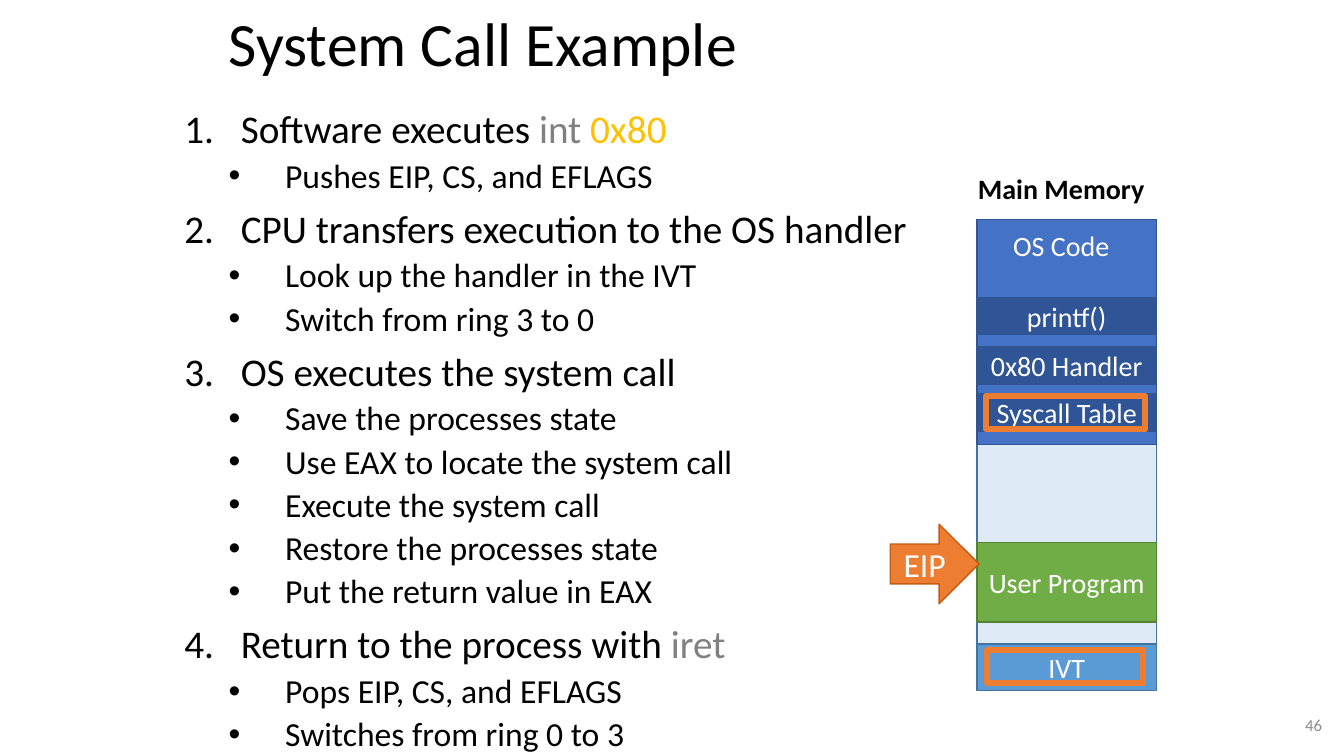
from dataclasses import dataclass

from lxml import etree
from pptx import Presentation
from pptx.dml.color import RGBColor
from pptx.enum.shapes import MSO_SHAPE
from pptx.enum.text import MSO_ANCHOR, MSO_AUTO_SIZE, PP_ALIGN
from pptx.oxml.ns import qn
from pptx.util import Inches, Pt

RECTANGLE, RIGHT_ARROW = MSO_SHAPE.RECTANGLE, MSO_SHAPE.RIGHT_ARROW
TOP, MIDDLE = MSO_ANCHOR.TOP, MSO_ANCHOR.MIDDLE
LEFT, CENTER, RIGHT = PP_ALIGN.LEFT, PP_ALIGN.CENTER, PP_ALIGN.RIGHT
FIT_SHAPE = MSO_AUTO_SIZE.SHAPE_TO_FIT_TEXT


@dataclass(frozen=True)
class Theme:
    font: str = "Calibri"
    title_size: int = 44
    step_size: int = 28
    detail_size: int = 24
    label_size: int = 20
    number_size: int = 12
    text: str = "000000"
    inverse: str = "FFFFFF"
    muted: str = "8C8C8C"
    keyword: str = "808080"
    literal: str = "FFC000"
    memory: str = "DEEBF7"
    vector_table: str = "5B9BD5"
    memory_line: str = "43739E"
    system: str = "4472C4"
    routine: str = "2F5597"
    system_line: str = "325491"
    program: str = "70AD47"
    program_line: str = "548235"
    accent: str = "ED7D31"
    accent_line: str = "C55A11"


THEME = Theme()

# Each step: its runs (text, colour) and its details.
STEPS = [
    ([("Software executes ", THEME.text), ("int ", THEME.keyword), ("0x80", THEME.literal)],
     ["Pushes EIP, CS, and EFLAGS"]),
    ([("CPU transfers execution to the OS handler", THEME.text)],
     ["Look up the handler in the IVT", "Switch from ring 3 to 0"]),
    ([("OS executes the system call", THEME.text)],
     ["Save the processes state", "Use EAX to locate the system call",
      "Execute the system call", "Restore the processes state",
      "Put the return value in EAX"]),
    ([("Return to the process with ", THEME.text), ("iret", THEME.keyword)],
     ["Pops EIP, CS, and EFLAGS", "Switches from ring 0 to 3"]),
]

MEMORY_LEFT, MEMORY_WIDTH = 9.69, 1.78
ROUTINE_HEIGHT = 0.37


def add_run(paragraph, text, *, size, color=THEME.text, bold=False):
    run = paragraph.add_run()
    run.text = text
    run.font.name = THEME.font
    run.font.size = Pt(size)
    run.font.bold = bold
    run.font.color.rgb = RGBColor.from_string(color)


def set_list_marker(paragraph, margin, tag, **attributes):
    """Give the paragraph a hanging indent and a bullet or number."""
    properties = paragraph._p.get_or_add_pPr()
    properties.set("marL", str(Inches(margin)))
    properties.set("indent", str(Inches(-0.56)))
    font = etree.SubElement(properties, qn("a:buFont"))
    font.set("typeface", "Arial" if tag == "a:buChar" else "+mj-lt")
    marker = etree.SubElement(properties, qn(tag))
    for name, value in attributes.items():
        marker.set(name, value)


class SlideBuilder:
    def __init__(self, slide, theme):
        self.slide = slide
        self.theme = theme

    def text_frame(self, box, anchor=MIDDLE, wrap=True):
        shape = self.slide.shapes.add_textbox(*map(Inches, box))
        frame = shape.text_frame
        frame.word_wrap = wrap
        frame.vertical_anchor = anchor
        return frame

    def text(self, text, box, *, align=LEFT, line_spacing=1.0, **text_format):
        frame = self.text_frame(box)
        paragraph = frame.paragraphs[0]
        paragraph.alignment = align
        paragraph.line_spacing = line_spacing
        add_run(paragraph, text, **text_format)

    def label(self, text, box, **text_format):
        """Add a one-line caption whose box fits its text."""
        frame = self.text_frame(box, anchor=TOP, wrap=False)
        frame.auto_size = FIT_SHAPE
        add_run(frame.paragraphs[0], text, size=self.theme.label_size, **text_format)

    def shape(self, box, *, fill=None, line, line_width=1, text="", size=THEME.label_size,
              preset=RECTANGLE):
        shape = self.slide.shapes.add_shape(preset, *map(Inches, box))
        shape.shadow.inherit = False
        if fill:
            shape.fill.solid()
            shape.fill.fore_color.rgb = RGBColor.from_string(fill)
        else:
            shape.fill.background()
        shape.line.color.rgb = RGBColor.from_string(line)
        shape.line.width = Pt(line_width)
        if text:
            frame = shape.text_frame
            frame.word_wrap = True
            frame.vertical_anchor = MIDDLE
            paragraph = frame.paragraphs[0]
            paragraph.alignment = CENTER
            add_run(paragraph, text, size=size, color=self.theme.inverse)

    def memory_block(self, top, height, fill, line, text=""):
        self.shape((MEMORY_LEFT, top, MEMORY_WIDTH, height), fill=fill, line=line, text=text)

    def highlight(self, box):
        self.shape(box, line=self.theme.accent, line_width=4.5)

    def steps(self, steps, box):
        """Add numbered steps, each followed by bulleted details."""
        frame = self.text_frame(box)
        paragraphs = []

        def next_paragraph(level, space_before):
            paragraph = frame.add_paragraph() if paragraphs else frame.paragraphs[0]
            paragraphs.append(paragraph)
            paragraph.level = level
            paragraph.line_spacing = 0.9
            paragraph.space_before = Pt(space_before)
            return paragraph

        for runs, details in steps:
            paragraph = next_paragraph(0, 10)
            set_list_marker(paragraph, 0.56, "a:buAutoNum", type="arabicPeriod")
            for text, color in runs:
                add_run(paragraph, text, size=self.theme.step_size, color=color)
            for detail in details:
                paragraph = next_paragraph(1, 5)
                set_list_marker(paragraph, 1, "a:buChar", char="•")
                add_run(paragraph, detail, size=self.theme.detail_size)


def main():
    presentation = Presentation()
    presentation.slide_width = Inches(13.33)
    presentation.slide_height = Inches(7.5)
    slide = presentation.slides.add_slide(presentation.slide_layouts[6])
    builder = SlideBuilder(slide, THEME)

    builder.text("System Call Example", (2.17, 0, 9, 0.93),
                 size=THEME.title_size, line_spacing=0.9)
    builder.text("46", (12.42, 6.99, 0.79, 0.4), align=RIGHT,
                 size=THEME.number_size, color=THEME.muted)

    builder.memory_block(2.18, 4.65, THEME.memory, THEME.memory_line)
    builder.memory_block(6.39, 0.46, THEME.vector_table, THEME.memory_line, "IVT")
    builder.label("Main Memory", (9.6, 1.65, 1.87, 0.44), bold=True)
    builder.memory_block(2.18, 2.23, THEME.system, THEME.system_line)
    builder.memory_block(5.38, 0.79, THEME.program, THEME.program_line, "User Program")
    builder.steps(STEPS, (1.73, 0.99, 7.76, 6.59))
    for name, top in (("printf()", 2.95), ("0x80 Handler", 3.44), ("Syscall Table", 3.91)):
        builder.memory_block(top, ROUTINE_HEIGHT, THEME.routine, THEME.system_line, name)
    builder.label("OS Code", (9.95, 2.22, 1.16, 0.44), color=THEME.inverse)

    builder.shape((8.83, 5.2, 0.88, 0.79), fill=THEME.accent, line=THEME.accent_line,
                  text="EIP", size=THEME.detail_size, preset=RIGHT_ARROW)
    builder.highlight((9.79, 6.45, 1.55, 0.33))
    builder.highlight((9.78, 3.93, 1.58, 0.33))

    presentation.save("out.pptx")


if __name__ == "__main__":
    main()
